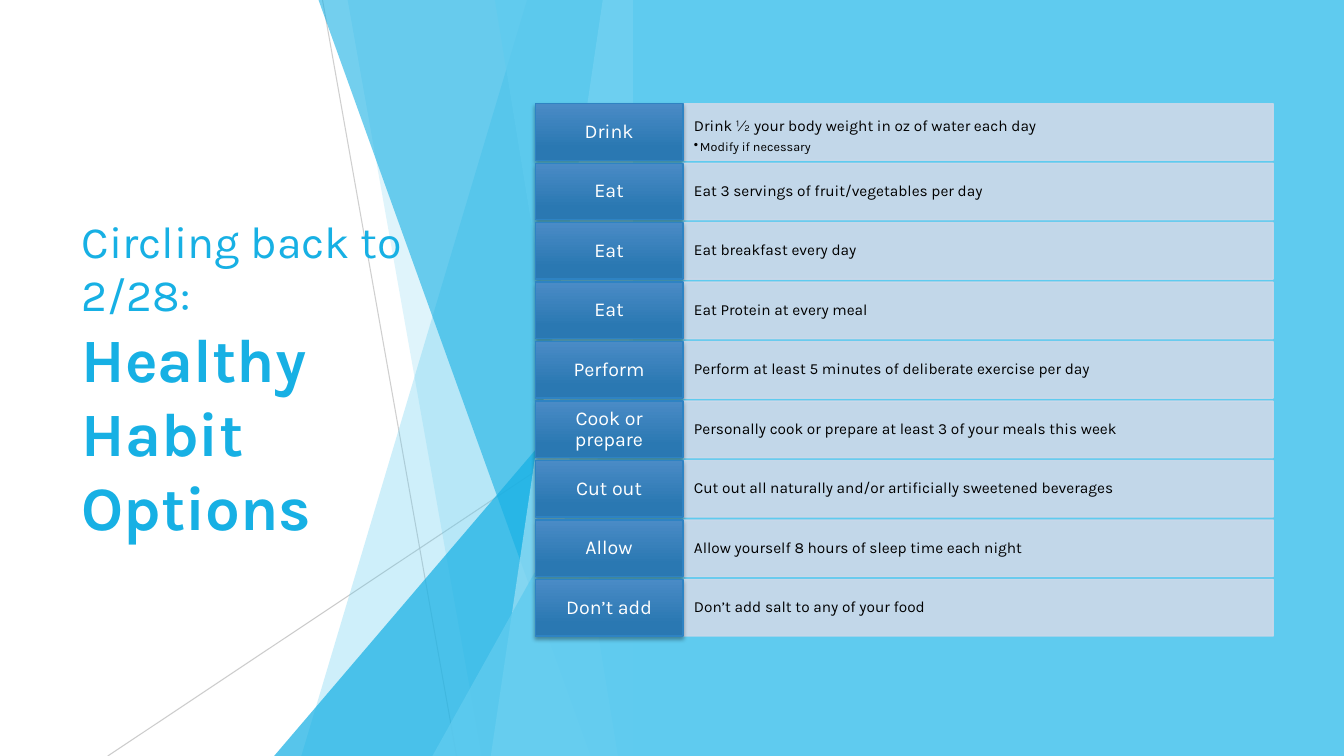
from lxml.etree import SubElement
from pptx import Presentation
from pptx.dml.color import RGBColor
from pptx.enum.shapes import MSO_CONNECTOR, MSO_SHAPE
from pptx.enum.text import MSO_ANCHOR, PP_ALIGN
from pptx.oxml.ns import qn
from pptx.util import Inches, Pt

C = {
    "white": "FFFFFF", "black": "000000", "gray": "BFBFBF",
    "sky": "5FCBEF", "cyan": "17B0E4", "pale": "9FE0F5",
    "row": "CDD9E9", "edge": "2E83C3", "top": "4A8BC6", "base": "2A78B2",
}
FONT = "Karla"
HABITS = [
    ("Drink", "Drink ½ your body weight in oz of water each day", "Modify if necessary"),
    ("Eat", "Eat 3 servings of fruit/vegetables per day", None),
    ("Eat", "Eat breakfast every day", None),
    ("Eat", "Eat Protein at every meal", None),
    ("Perform", "Perform at least 5 minutes of deliberate exercise per day", None),
    ("Cook or prepare", "Personally cook or prepare at least 3 of your meals this week", None),
    ("Cut out", "Cut out all naturally and/or artificially sweetened beverages", None),
    ("Allow", "Allow yourself 8 hours of sleep time each night", None),
    ("Don’t add", "Don’t add salt to any of your food", None),
]
RAYS = [((23.1, 0), (13.13, 100), 75), ((0, 53.73), (39.08, 100), 80)]
FACETS = [
    ("band", 7.88, 24.68, "sky", 30),
    ("band", 21.23, 11.25, "sky", 20),
    ("triangle", 26.7, 44.4, "cyan", 72),
    ("band", 23.4, 3.15, "cyan", 60),
    ("band", 2.25, 10.58, "pale", 70),
    ("band", 10.28, 1.13, "sky", 65),
    ("triangle", 14.93, 52.4, "sky", 80),
]

prs = Presentation()
prs.slide_width, prs.slide_height = Inches(13.33), Inches(7.5)
slide = prs.slides.add_slide(prs.slide_layouts[6])
shapes = slide.shapes


def across(share):
    return round(prs.slide_width * share / 100)


def down(share):
    return round(prs.slide_height * share / 100)


def place(x, y, w, h):
    return across(x), down(y), across(w), down(h)


def rgb(name):
    return RGBColor.from_string(C[name])


def set_alpha(s, alpha):
    for clr in s._element.spPr.iter(qn("a:srgbClr")):
        SubElement(clr, qn("a:alpha"), val=str(alpha * 1000))


def paint(s, fill, line=None, alpha=None):
    s.shadow.inherit = False
    s.fill.solid()
    s.fill.fore_color.rgb = rgb(fill)
    if line:
        s.line.color.rgb = rgb(line)
        s.line.width = Pt(1)
    else:
        s.line.fill.background()
    if alpha:
        set_alpha(s, alpha)


def write(p, text, size, color, bold=False, align=PP_ALIGN.LEFT, spacing=1.0, after=0):
    p.alignment, p.line_spacing, p.space_after = align, spacing, Pt(after)
    r = p.add_run()
    r.text = text
    r.font.name, r.font.size, r.font.bold = FONT, Pt(size), bold
    r.font.color.rgb = rgb(color)


def frame(s, mx, my, anchor=MSO_ANCHOR.MIDDLE):
    tf = s.text_frame
    tf.word_wrap, tf.vertical_anchor = True, anchor
    tf.margin_left = tf.margin_right = Inches(mx)
    tf.margin_top = tf.margin_bottom = Inches(my)
    return tf


def add_facets(x, y, w, h):
    right = x + w
    for (x1, y1), (x2, y2), alpha in RAYS:
        ray = shapes.add_connector(
            MSO_CONNECTOR.STRAIGHT,
            across(right - x1), down(y + h * y1 / 100),
            across(right - x2), down(y + h * y2 / 100))
        ray.line.color.rgb = rgb("gray")
        ray.line.width = Pt(0.75)
        set_alpha(ray, alpha)
        SubElement(ray._element.spPr, qn("a:effectLst"))
    for kind, a, b, color, alpha in FACETS:
        if kind == "triangle":
            s = shapes.add_shape(
                MSO_SHAPE.ISOSCELES_TRIANGLE,
                *place(right - a, y + h * b / 100, a, h * (100 - b) / 100))
            s.adjustments[0] = 1
        else:
            fb = shapes.build_freeform(across(right - a), down(y))
            fb.add_line_segments([
                (across(right), down(y)), (across(right), down(y + h)),
                (across(right - b), down(y + h))])
            s = fb.convert_to_shape()
        paint(s, color, alpha=alpha)


def add_panel(x, y, w, h):
    paint(shapes.add_shape(MSO_SHAPE.RECTANGLE, *place(x, y, w, h)), "sky")


def add_title(x, y, w, h):
    tf = frame(shapes.add_textbox(*place(x, y, w, h)), 0.1, 0.05)
    p = tf.paragraphs[0]
    write(p, "Circling back to 2/28:", 32, "cyan")
    p.add_line_break()
    write(p, "Healthy Habit Options", 44, "cyan", bold=True)


def add_label(text, *box):
    s = shapes.add_shape(MSO_SHAPE.RECTANGLE, *place(*box))
    paint(s, "base", line="edge")
    s.fill.gradient()
    s.fill.gradient_angle = 270
    for stop, color, position in zip(s.fill.gradient_stops, ("top", "base"), (0, 0.78)):
        stop.color.rgb = rgb(color)
        stop.position = position
    effects = s._element.spPr.find(qn("a:effectLst"))
    shadow = SubElement(effects, qn("a:outerShdw"), blurRad=str(Pt(3)), dist=str(Pt(2)),
                        dir="5400000", rotWithShape="0")
    clr = SubElement(shadow, qn("a:srgbClr"), val=C["black"])
    SubElement(clr, qn("a:alpha"), val="35000")
    write(frame(s, 0.08, 0.05).paragraphs[0], text, 14, "white",
          align=PP_ALIGN.CENTER, spacing=0.9)


def add_detail(text, note, *box):
    s = shapes.add_shape(MSO_SHAPE.RECTANGLE, *place(*box))
    paint(s, "row", line="row", alpha=90)
    tf = frame(s, 0.11, 0.14, MSO_ANCHOR.TOP if note else MSO_ANCHOR.MIDDLE)
    write(tf.paragraphs[0], text, 11, "black", spacing=0.9, after=4 if note else 0)
    if note:
        p = tf.add_paragraph()
        p.level = 1
        write(p, note, 9, "black", spacing=0.9, after=1)
        pPr = p._p.get_or_add_pPr()
        pPr.set("marL", str(Inches(0.06)))
        pPr.set("indent", str(Inches(-0.06)))
        SubElement(pPr, qn("a:buChar"), char="•")


def add_habits(x, y, w, h):
    pitch = h / (len(HABITS) - 0.05)
    row_h, label_w = pitch * 0.95, w * 0.2
    for i, (label, detail, note) in enumerate(HABITS):
        top = y + i * pitch
        add_detail(detail, note, x + label_w, top, w - label_w, row_h)
        add_label(label, x, top, label_w, row_h)


add_facets(20.4, 0, 26.7, 100)
add_panel(47.1, 0, 52.9, 100)
add_title(5.33, 20.13, 29.1, 59.73)
add_habits(39.83, 13.73, 54.9, 70.4)
prs.save("out.pptx")
